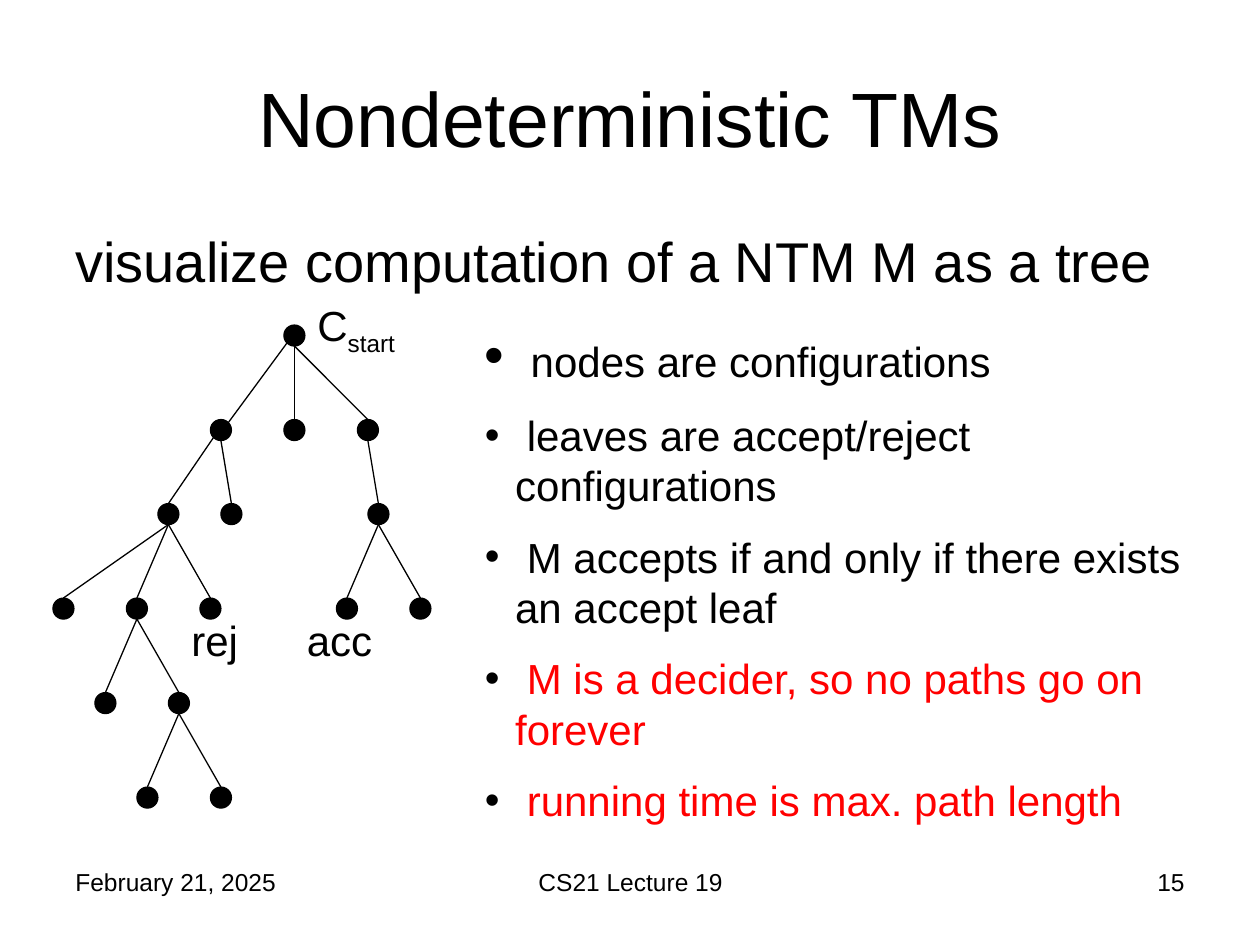
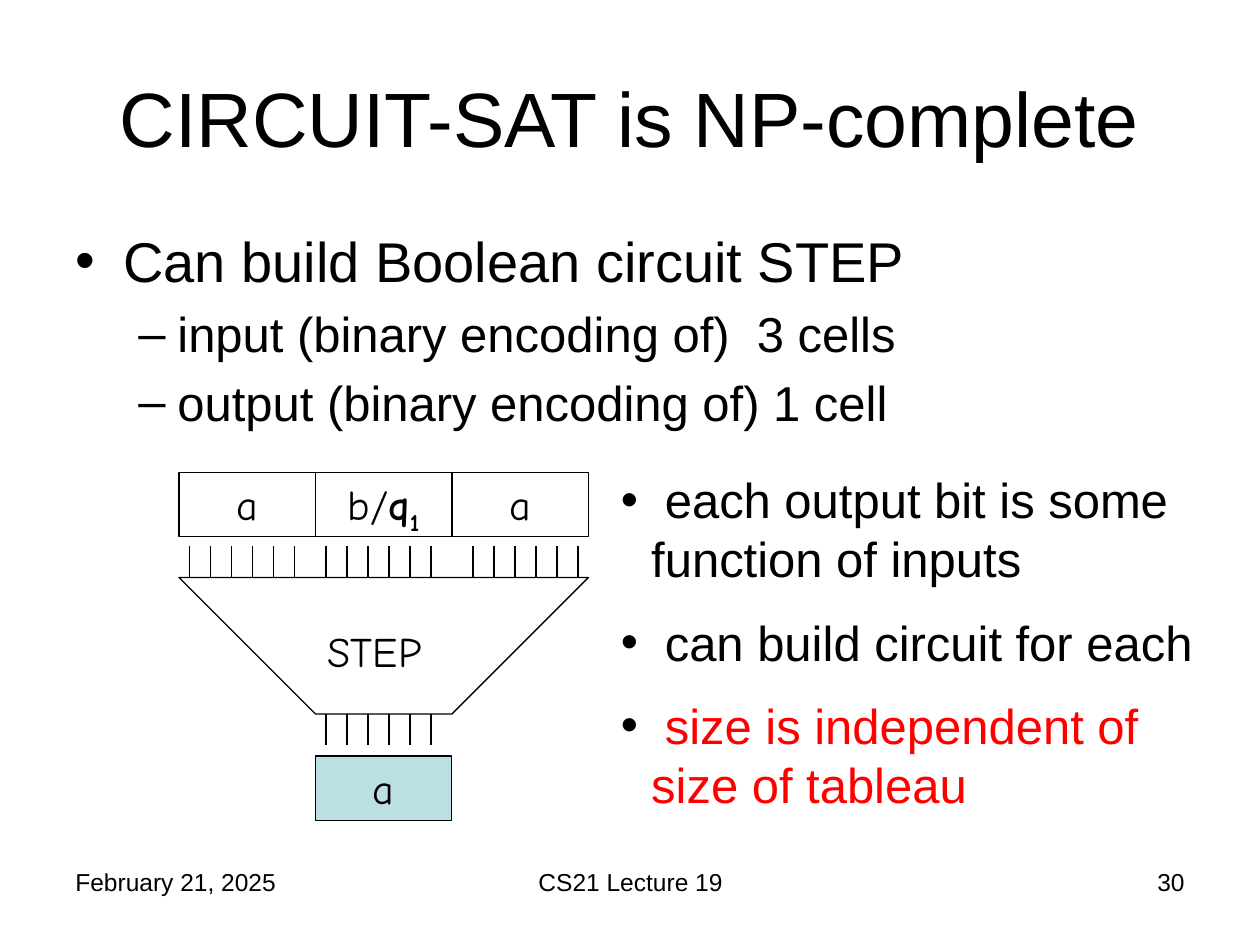
from typing import NamedTuple

from lxml.etree import SubElement
from pptx import Presentation
from pptx.dml.color import RGBColor
from pptx.enum.shapes import MSO_CONNECTOR, MSO_SHAPE
from pptx.enum.text import MSO_ANCHOR, MSO_AUTO_SIZE, PP_ALIGN
from pptx.oxml.ns import qn
from pptx.util import Inches, Pt

BLACK = RGBColor(0x00, 0x00, 0x00)
RED = RGBColor(0xFF, 0x00, 0x00)
PALE_TEAL = RGBColor(0xBB, 0xE0, 0xE3)
SANS = "Arial"
HAND = "Comic Neue"
LINE_WIDTH = Pt(0.75)
GRID = Inches(1) / 12  # both diagrams sit on a grid of twelfths of an inch

TITLE_BOX = (0.5, 0.3, 9, 1.25)
DATE = "February 21, 2025"
LECTURE = "CS21 Lecture 19"

# Ellipse points as fractions of the node's diameter
TOP, BOTTOM = (0.5, 0), (0.5, 1)
LOWER_LEFT, UPPER_RIGHT = (0.15, 0.85), (0.85, 0.15)


class Run(NamedTuple):
    text: str
    size: int = 24
    color: RGBColor = BLACK
    font: str = SANS
    bold: bool = False
    subscript: bool = False


def inches(box):
    return [Inches(length) for length in box]


def grid_box(origin, x, y, width, height):
    """Turn grid units, counted from origin, into a box of lengths."""
    left, top = origin
    return [int(left + x * GRID), int(top + y * GRID),
            int(width * GRID), int(height * GRID)]


def add_runs(paragraph, runs):
    for part in runs:
        run = paragraph.add_run()
        run.text = part.text
        font = run.font
        font.name = part.font
        font.size = Pt(part.size)
        font.color.rgb = part.color
        if part.bold:
            font.bold = True
        if part.subscript:
            font._element.set("baseline", "-25000")


def format_paragraph(paragraph, before=0, margin=0, hanging=0, bullet=None):
    """Set space before in percent, the hanging indent and the bullet."""
    properties = paragraph._p.get_or_add_pPr()
    properties.set("marL", str(Inches(margin)))
    properties.set("indent", str(-Inches(hanging)))
    if before:
        spacing = SubElement(properties, qn("a:spcBef"))
        SubElement(spacing, qn("a:spcPct"), val=str(before * 1000))
    if bullet:
        SubElement(properties, qn("a:buFont"), typeface=SANS)
        SubElement(properties, qn("a:buChar"), char=bullet)
    else:
        SubElement(properties, qn("a:buNone"))


def fill_frame(frame, paragraphs, align=PP_ALIGN.LEFT, grow=False):
    """Write paragraphs, each a list of runs and a dict of its format."""
    frame.word_wrap = True
    frame.vertical_anchor = MSO_ANCHOR.TOP
    if grow:
        frame.auto_size = MSO_AUTO_SIZE.SHAPE_TO_FIT_TEXT
    for index, (runs, layout) in enumerate(paragraphs):
        paragraph = frame.add_paragraph() if index else frame.paragraphs[0]
        paragraph.alignment = align
        format_paragraph(paragraph, **layout)
        add_runs(paragraph, runs)


def add_text(slide, box, paragraphs, **options):
    fill_frame(slide.shapes.add_textbox(*box).text_frame, paragraphs, **options)


def add_label(slide, box, *runs):
    add_text(slide, box, [(runs, {"before": 50})], grow=True)


def add_remarks(slide, box, remarks):
    layout = {"before": 50, "margin": 0.24, "hanging": 0.24, "bullet": "•"}
    add_text(slide, inches(box), [(runs, layout) for runs in remarks], grow=True)


def outline(shape, fill=None):
    shape.shadow.inherit = False
    shape.line.color.rgb = BLACK
    shape.line.width = LINE_WIDTH
    if fill is None:
        shape.fill.background()
    else:
        shape.fill.solid()
        shape.fill.fore_color.rgb = fill


def add_line(slide, start, end):
    ends = [int(value) for value in (*start, *end)]
    line = slide.shapes.add_connector(MSO_CONNECTOR.STRAIGHT, *ends)
    line.line.color.rgb = BLACK
    line.line.width = LINE_WIDTH
    SubElement(line._element.spPr, qn("a:effectLst"))


def add_lecture_slide(deck, heading, number):
    """Add a slide with the shared title and footer."""
    slide = deck.slides.add_slide(deck.slide_layouts[5])
    title = slide.shapes.title
    title.left, title.top, title.width, title.height = inches(TITLE_BOX)
    title.text_frame.vertical_anchor = MSO_ANCHOR.MIDDLE
    paragraph = title.text_frame.paragraphs[0]
    paragraph.alignment = PP_ALIGN.CENTER
    add_runs(paragraph, [Run(heading, 44)])

    for text, left, width, align in (
        (DATE, 0.5, 2.33, PP_ALIGN.LEFT),
        (LECTURE, 3.42, 3.17, PP_ALIGN.CENTER),
        (str(number), 7.17, 2.33, PP_ALIGN.RIGHT),
    ):
        add_text(slide, inches((left, 6.83, width, 0.52)),
                 [([Run(text, 14)], {})], align=align)
    return slide


def draw_tree(slide, origin):
    """Draw the computation tree, with nodes placed in grid units."""
    diameter = 2
    level_tops = (0, 9, 17, 26, 35, 44)
    levels = ((22,), (15, 22, 29), (10, 16, 30),
              (0, 7, 14, 27, 34), (4, 11), (8, 15))
    # For each level below the root, the index of each node's parent
    parents = ((0, 0, 0), (0, 0, 2), (0, 0, 0, 2, 2), (1, 1), (1, 1))
    # Edges that leave or reach a node away from its bottom or top
    slanted = {(1, 0): (LOWER_LEFT, UPPER_RIGHT), (2, 0): (LOWER_LEFT, TOP)}

    def node_point(level, index, site):
        x = levels[level][index] + site[0] * diameter
        y = level_tops[level] + site[1] * diameter
        return origin[0] + x * GRID, origin[1] + y * GRID

    for level, lefts in enumerate(levels):
        for left in lefts:
            node = slide.shapes.add_shape(MSO_SHAPE.OVAL, *grid_box(
                origin, left, level_tops[level], diameter, diameter))
            outline(node, BLACK)
    for level, level_parents in enumerate(parents, start=1):
        for index, parent in enumerate(level_parents):
            leave, reach = slanted.get((level, index), (BOTTOM, TOP))
            add_line(slide, node_point(level - 1, parent, leave),
                     node_point(level, index, reach))

    for x, y, runs in (
        (24, -3, [Run("C"), Run("start", subscript=True)]),
        (12, 27, [Run("rej")]),
        (23, 27, [Run("acc")]),
    ):
        add_label(slide, grid_box(origin, x, y, 15, 6), *runs)


def draw_step_circuit(slide, origin):
    """Draw three input cells, the STEP circuit and its output cell."""
    cell_width, cell_height = 13, 6.12
    circuit_top, circuit_bottom = 10, 23
    wire_length, wire_gap, wires = 3, 2, 6

    symbol = [Run("a", font=HAND)]
    state = [Run("b/", font=HAND), Run("q", font=HAND, bold=True),
             Run("1", font=HAND, bold=True, subscript=True)]
    for column, top, runs, fill in (
        (0, 0, symbol, None), (1, 0, state, None), (2, 0, symbol, None),
        (1, 27, symbol, PALE_TEAL),
    ):
        cell = slide.shapes.add_shape(MSO_SHAPE.RECTANGLE, *grid_box(
            origin, column * cell_width, top, cell_width, cell_height))
        outline(cell, fill)
        fill_frame(cell.text_frame, [(runs, {"before": 50})],
                   align=PP_ALIGN.CENTER, grow=True)

    def point(x, y):
        return int(origin[0] + x * GRID), int(origin[1] + y * GRID)

    builder = slide.shapes.build_freeform(*point(0, circuit_top))
    builder.add_line_segments([
        point(cell_width, circuit_bottom),
        point(2 * cell_width, circuit_bottom),
        point(3 * cell_width, circuit_top),
    ], close=True)
    outline(builder.convert_to_shape())

    input_top = circuit_top - wire_length
    for first, top in ((1, input_top), (14, input_top), (28, input_top),
                       (14, circuit_bottom)):
        for wire in range(wires):
            x = first + wire * wire_gap
            add_line(slide, point(x, top), point(x, top + wire_length))

    add_label(slide, grid_box(origin, cell_width, 14, 16, 6),
              Run("STEP", font=HAND))


def build_tree_slide(deck):
    slide = add_lecture_slide(deck, "Nondeterministic TMs", 15)
    add_text(slide, inches((0.5, 1.75, 9, 0.67)), [
        ([Run("visualize computation of a NTM M as a tree", 32)],
         {"before": 20, "margin": 0.38, "hanging": 0.38}),
    ])
    draw_tree(slide, inches((0.42, 2.58)))
    add_remarks(slide, (3.75, 2.5, 5.75, 4.23), [
        [Run(" ", 32), Run("nodes are configurations")],
        [Run(" leaves are accept/reject configurations")],
        [Run(" M accepts if and only if there exists an accept leaf")],
        [Run(" "), Run("M is a decider, so no paths go on forever", color=RED)],
        [Run(" "), Run("running time is max. path length", color=RED)],
    ])


def build_circuit_slide(deck):
    slide = add_lecture_slide(deck, "CIRCUIT-SAT is NP-complete", 30)
    detail = {"before": 20, "margin": 0.81, "hanging": 0.31, "bullet": "–"}
    add_text(slide, inches((0.5, 1.75, 9, 4.95)), [
        ([Run("Can build Boolean circuit STEP", 32)],
         {"before": 20, "margin": 0.38, "hanging": 0.38, "bullet": "•"}),
        ([Run("input (binary encoding of)  3 cells", 28)], detail),
        ([Run("output (binary encoding of) 1 cell", 28)], detail),
    ])
    draw_step_circuit(slide, inches((1.42, 3.75)))
    add_remarks(slide, (4.83, 3.68, 4.92, 2.9), [
        [Run(" each output bit is some function of inputs", 28)],
        [Run(" can build circuit for each", 28)],
        [Run(" ", 28), Run("size is independent of size of tableau", 28, RED)],
    ])


def main():
    deck = Presentation()
    deck.slide_width, deck.slide_height = Inches(10), Inches(7.5)
    build_tree_slide(deck)
    build_circuit_slide(deck)
    deck.save("out.pptx")


if __name__ == "__main__":
    main()
